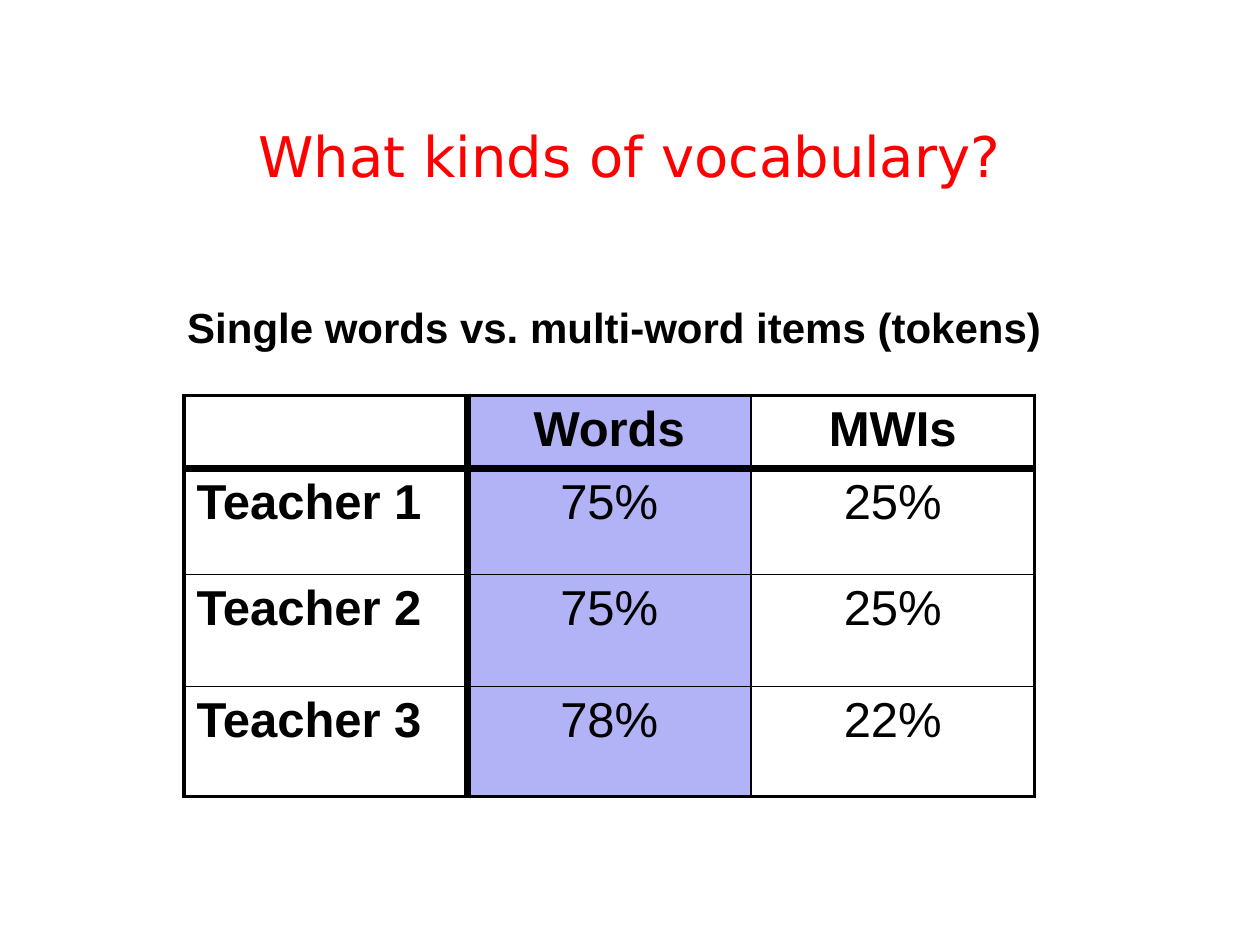
"""Build a slide with a title, a caption and a table of vocabulary shares."""
from lxml.etree import SubElement
from pptx import Presentation
from pptx.dml.color import RGBColor
from pptx.enum.text import MSO_ANCHOR as Anchor, PP_ALIGN as Align
from pptx.oxml import parse_xml
from pptx.oxml.ns import nsdecls, qn
from pptx.util import Inches, Pt

RED = RGBColor(0xFF, 0x00, 0x00)
BLACK = RGBColor(0x00, 0x00, 0x00)
BLUE = RGBColor(0x00, 0x00, 0xE5)


def style(para, text, face, size, color, bold, align):
    para.text = text
    para.alignment = align
    font = para.font
    font.name, font.size, font.bold = face, Pt(size), bold
    font.color.rgb = color


def border(cell, widths):
    for pos, (side, width) in enumerate(zip("LRTB", widths)):
        line = parse_xml(
            f'<a:ln{side} {nsdecls("a")} w="{Pt(width)}"><a:solidFill>'
            f'<a:srgbClr val="{BLACK}"/></a:solidFill></a:ln{side}>')
        cell._tc.get_or_add_tcPr().insert(pos, line)


deck = Presentation()
deck.slide_width, deck.slide_height = Inches(10), Inches(7.5)
slide = deck.slides.add_slide(deck.slide_layouts[6])

title = slide.shapes.add_textbox(Inches(0.5), Inches(0.3), Inches(9), Inches(1.25)).text_frame
title.word_wrap = True
title.vertical_anchor = Anchor.BOTTOM
style(title.paragraphs[0], "What kinds of vocabulary?", "DejaVu Sans", 32, RED, False, Align.CENTER)

rows = [
    ("", "Words", "MWIs"),
    ("Teacher 1", "75%", "25%"),
    ("Teacher 2", "75%", "25%"),
    ("Teacher 3", "78%", "22%"),
]
heights = [0.58, 0.84, 0.89, 0.87]
across = [2.25, 4.5, 1, 2.25]
down = [2.25, 4.5, 1, 1, 2.25]

table = slide.shapes.add_table(
    4, 3, Inches(1.46), Inches(3.14), Inches(6.75), Inches(sum(heights))).table
table.first_row = table.horz_banding = False
for col in table.columns:
    col.width = Inches(2.25)

for r, texts in enumerate(rows):
    table.rows[r].height = Inches(heights[r])
    for c, text in enumerate(texts):
        cell = table.cell(r, c)
        if c == 1:
            cell.fill.solid()
            cell.fill.fore_color.rgb = BLUE
            tint = cell._tc.tcPr.find(".//" + qn("a:srgbClr"))
            SubElement(tint, qn("a:alpha"), val="30000")
        else:
            cell.fill.background()
        border(cell, (across[c], across[c + 1], down[r], down[r + 1]))
        if text:
            style(cell.text_frame.paragraphs[0], text, "Arial", 28, BLACK,
                  r == 0 or c == 0, Align.CENTER if c else Align.LEFT)

label = slide.shapes.add_textbox(Inches(1.25), Inches(2.34), Inches(7.25), Inches(0.51)).text_frame
label.word_wrap = False
style(label.paragraphs[0], "Single words vs. multi-word items (tokens)", "Arial", 24, BLACK, True, Align.CENTER)

deck.save("out.pptx")
